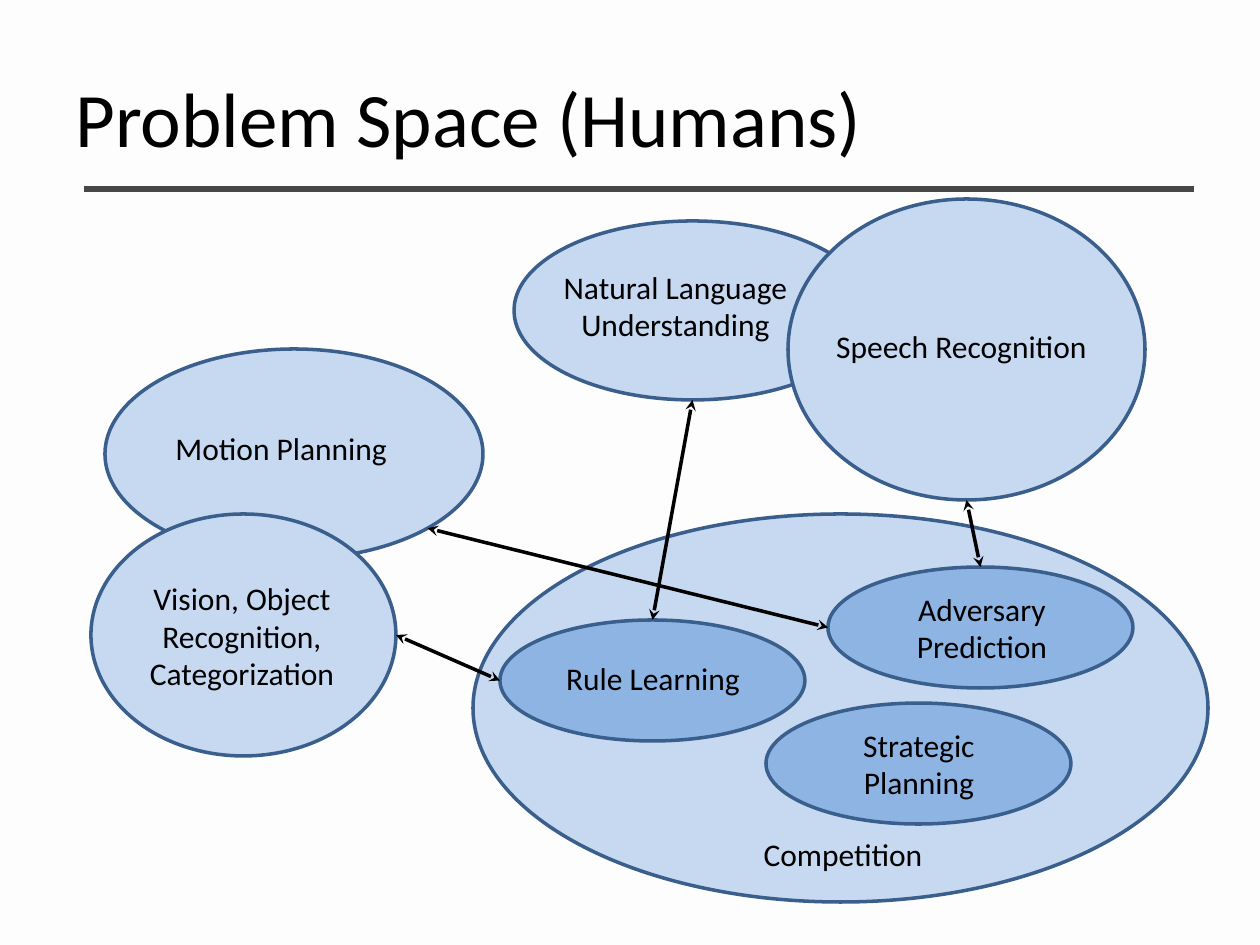
from dataclasses import dataclass
from math import sqrt

from lxml import etree
from pptx import Presentation
from pptx import util as u
from pptx.dml.color import RGBColor
from pptx.enum import shapes, text
from pptx.oxml.ns import qn


@dataclass(frozen=True)
class Theme:
    font: str = "Calibri"
    title_size: int = 44
    label_size: int = 18
    background: str = "FDFDFD"
    ink: str = "000000"
    rule: str = "474747"
    outline: str = "3A5F8C"
    area: str = "C6D9F1"
    skill: str = "8EB4E3"


THEME = Theme()
PX_PER_INCH = 126
CENTER, LEFT = text.PP_ALIGN.CENTER, text.PP_ALIGN.LEFT

# Content: boxes are left, top, width, height in px
TITLE = ("Problem Space (Humans)", (63, 38, 1134, 157))
TITLE_RULE = ((84, 189), (1194, 189))

# label, ellipse box, label box, fill, alignment; back to front
PROBLEMS = [
    ("Motion Planning", (105, 349, 378, 210), (163, 423, 242, 50), THEME.area, LEFT),
    ("Natural Language Understanding", (514, 221, 357, 179), (523, 261, 305, 89), THEME.area, CENTER),
    ("Speech Recognition", (788, 199, 357, 301), (809, 321, 305, 50), THEME.area, CENTER),
    ("Vision, Object Recognition, Categorization", (91, 514, 305, 242), (111, 572, 262, 127), THEME.area, CENTER),
    ("Competition", (473, 514, 735, 388), (712, 829, 262, 50), THEME.area, CENTER),
    ("Adversary Prediction", (828, 567, 305, 121), (861, 583, 242, 89), THEME.skill, CENTER),
    ("Rule Learning", (500, 620, 305, 121), (532, 653, 242, 50), THEME.skill, CENTER),
    ("Strategic Planning", (766, 703, 305, 121), (798, 719, 242, 89), THEME.skill, CENTER),
]

# (problem, side) at each end
LINKS = [
    (("Motion Planning", "bottom right"), ("Adversary Prediction", "left")),
    (("Natural Language Understanding", "bottom"), ("Rule Learning", "top")),
    (("Vision, Object Recognition, Categorization", "right"), ("Rule Learning", "left")),
    (("Speech Recognition", "bottom"), ("Adversary Prediction", "top")),
]

# Direction from an ellipse's centre to its edge
SIDES = {
    "top": (0, -1),
    "left": (-1, 0),
    "bottom": (0, 1),
    "right": (1, 0),
    "bottom right": (sqrt(0.5), sqrt(0.5)),
}


def emu(*lengths):
    return [u.Emu(round(length * 914400 / PX_PER_INCH)) for length in lengths]


def rgb(color):
    return RGBColor.from_string(color)


def add_label(slide, words, box, size, align):
    frame = slide.shapes.add_textbox(*emu(*box)).text_frame
    frame.word_wrap = True
    frame.vertical_anchor = text.MSO_ANCHOR.MIDDLE
    paragraph = frame.paragraphs[0]
    paragraph.text = words
    paragraph.alignment = align
    paragraph.font.name = THEME.font
    paragraph.font.size = u.Pt(size)
    paragraph.font.color.rgb = rgb(THEME.ink)


def add_ellipse(slide, box, fill):
    ellipse = slide.shapes.add_shape(shapes.MSO_SHAPE.OVAL, *emu(*box))
    ellipse.shadow.inherit = False
    ellipse.fill.solid()
    ellipse.fill.fore_color.rgb = rgb(fill)
    ellipse.line.color.rgb = rgb(THEME.outline)
    ellipse.line.width = u.Pt(2)


def add_line(slide, start, end, color, width, arrows=False):
    line = slide.shapes.add_connector(shapes.MSO_CONNECTOR.STRAIGHT, *emu(*start, *end))
    line.line.color.rgb = rgb(color)
    line.line.width = u.Pt(width)
    if arrows:
        for tag in ("a:headEnd", "a:tailEnd"):
            etree.SubElement(line.line._get_or_add_ln(), qn(tag), type="stealth")
    etree.SubElement(line._element.spPr, qn("a:effectLst"))


def edge_point(box, side):
    left, top, width, height = box
    dx, dy = SIDES[side]
    return left + width / 2 * (1 + dx), top + height / 2 * (1 + dy)


def main():
    deck = Presentation()
    deck.slide_width, deck.slide_height = u.Inches(10), u.Inches(7.5)
    slide = deck.slides.add_slide(deck.slide_layouts[6])
    slide.background.fill.solid()
    slide.background.fill.fore_color.rgb = rgb(THEME.background)

    # Heading
    add_line(slide, *TITLE_RULE, THEME.rule, 4)
    add_label(slide, *TITLE, THEME.title_size, LEFT)

    # Problem areas and skills
    for words, box, label_box, fill, align in PROBLEMS:
        add_ellipse(slide, box, fill)
        add_label(slide, words, label_box, THEME.label_size, align)

    # Links between problems
    boxes = {words: box for words, box, *_ in PROBLEMS}
    for ends in LINKS:
        start, end = (edge_point(boxes[name], side) for name, side in ends)
        add_line(slide, start, end, THEME.ink, 2, arrows=True)

    deck.save("out.pptx")


if __name__ == "__main__":
    main()
